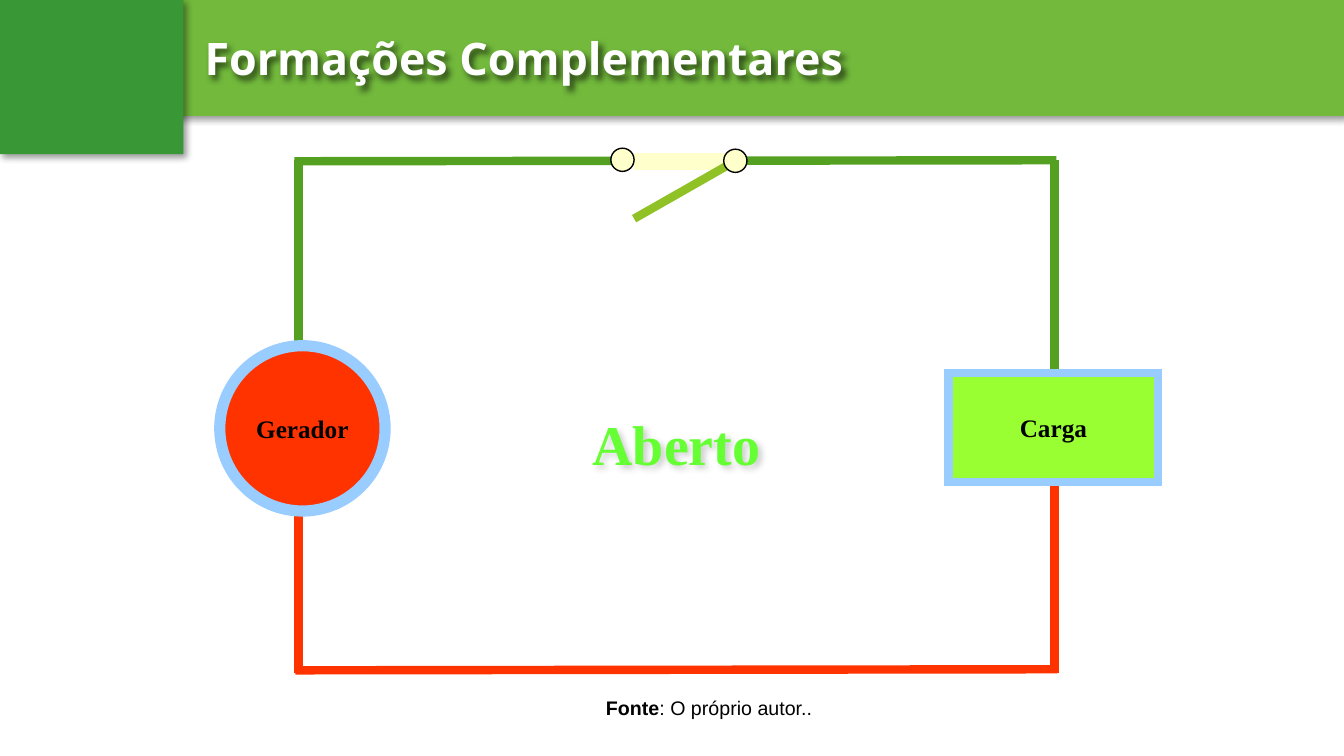
from dataclasses import dataclass
from typing import Optional

import pptx
import pptx.dml.color
import pptx.enum.shapes
import pptx.enum.text
import pptx.oxml
import pptx.oxml.ns
import pptx.util
from lxml import etree

SHAPE = pptx.enum.shapes.MSO_SHAPE
ANCHOR = pptx.enum.text.MSO_ANCHOR
ALIGN = pptx.enum.text.PP_ALIGN
FIT = pptx.enum.text.MSO_AUTO_SIZE
qn = pptx.oxml.ns.qn


@dataclass(frozen=True)
class Theme:
    banner: str = "72B93C"
    corner: str = "399736"
    live_wire: str = "54A021"
    return_wire: str = "FF3300"
    switch_arm: str = "90C226"
    contact: str = "FFFFCC"
    load: str = "99FF33"
    halo: str = "99CCFF"
    state: str = "66FF33"
    light: str = "FFFFFF"
    dark: str = "000000"
    title_size: int = 32
    state_size: int = 40
    part_size: int = 18
    source_size: int = 14
    title_font: str = "Open Sans"
    circuit_font: str = "Times New Roman"
    source_font: str = "Arial"


THEME = Theme()


@dataclass(frozen=True)
class Area:
    left: float
    top: float
    width: float
    height: float


@dataclass(frozen=True)
class Label:
    pieces: tuple[tuple[str, bool], ...]
    size: int
    font: str
    color: str
    align: Optional[ALIGN] = ALIGN.CENTER
    anchor: ANCHOR = ANCHOR.TOP
    fit: FIT = FIT.NONE
    spacing: Optional[float] = None
    vertical_inset: float = 0.05


@dataclass(frozen=True)
class Block:
    area: Area
    kind: Optional[SHAPE] = None
    fill: str = ""
    outline: str = ""
    weight: float = 0
    shadow: int = 0
    label: Optional[Label] = None


@dataclass(frozen=True)
class Wire:
    start: tuple[float, float]
    end: tuple[float, float]
    color: str


def part_label(name: str) -> Label:
    return Label(((name, True),), THEME.part_size, THEME.circuit_font, THEME.dark,
                 anchor=ANCHOR.MIDDLE)


def contact(left: float, top: float) -> Block:
    return Block(Area(left, top, 1.73, 3.07), SHAPE.OVAL, THEME.contact, THEME.dark, 1)


LEFT, RIGHT = 22.2, 78.45
TOP, BOTTOM = 21.2, 89.07
GAP_START, GAP_END = 47.18, 54.08

HEADER = (
    Block(Area(10.58, 0, 89.42, 15.33), SHAPE.RECTANGLE, THEME.banner, shadow=40),
    Block(Area(14.48, 3.47, 81.15, 8.53), shadow=60,
          label=Label((("Formações Complementares", True),), THEME.title_size,
                      THEME.title_font, THEME.light, align=ALIGN.LEFT)),
    Block(Area(0, 0, 13.65, 20.4), SHAPE.RECTANGLE, THEME.corner, shadow=40),
)
CIRCUIT = (
    Wire((LEFT, 53.47), (LEFT, TOP), THEME.live_wire),
    Wire((21.9, 21.33), (78.6, TOP), THEME.live_wire),
    Wire((RIGHT, 56.8), (RIGHT, TOP), THEME.live_wire),
    Wire((RIGHT, BOTTOM), (RIGHT, 53.47), THEME.return_wire),
    Wire((21.98, 88.67), (78.68, 88.53), THEME.return_wire),
    Wire((LEFT, BOTTOM), (LEFT, 56.8), THEME.return_wire),
    Block(Area(16.35, 45.73, 12.3, 21.87), SHAPE.OVAL, THEME.return_wire,
          THEME.halo, 8, label=part_label("Gerador")),
    Block(Area(70.58, 49.33, 15.6, 14.4), SHAPE.RECTANGLE, THEME.load,
          THEME.halo, 6, label=part_label("Carga")),
    Block(Area(40.58, 48.13, 19.5, 6.93), shadow=20,
          label=Label((("Aberto", True),), THEME.state_size, THEME.circuit_font,
                      THEME.state, fit=FIT.SHAPE_TO_FIT_TEXT, spacing=1.6)),
    Wire((GAP_START, 20.8), (GAP_END, 20.8), THEME.contact),
    Wire((GAP_START, 21.87), (GAP_END, 21.87), THEME.contact),
    Wire((GAP_START, 28.93), (54.68, 21.33), THEME.switch_arm),
    contact(45.45, 19.6),
    contact(53.85, 19.73),
)
SOURCE = (
    Block(Area(39.3, 90.67, 26.93, 5.87),
          label=Label((("Fonte", True), (": O próprio autor..", False)),
                      THEME.source_size, THEME.source_font, THEME.dark,
                      fit=FIT.SHAPE_TO_FIT_TEXT, vertical_inset=0.1)),
)

deck = pptx.Presentation()
deck.slide_width = pptx.util.Inches(13.33)
deck.slide_height = pptx.util.Inches(7.5)


def across(share: float) -> int:
    return round(deck.slide_width * share / 100)


def down(share: float) -> int:
    return round(deck.slide_height * share / 100)


def rgb(color: str) -> pptx.dml.color.RGBColor:
    return pptx.dml.color.RGBColor.from_string(color)


def apply(target: object, values: dict[str, object]) -> None:
    for name, value in values.items():
        setattr(target, name, value)


def cast_shadow(shape, opacity: int) -> None:
    effects = shape._element.spPr.find(qn("a:effectLst"))
    outer = etree.SubElement(effects, qn("a:outerShdw"), blurRad=str(pptx.util.Pt(5)),
                             dist=str(pptx.util.Pt(3)), dir="2700000", algn="tl",
                             rotWithShape="0")
    tint = etree.SubElement(outer, qn("a:srgbClr"), val=THEME.dark)
    etree.SubElement(tint, qn("a:alpha"), val=str(opacity * 1000))


def write_label(shape, label: Label) -> None:
    inset = pptx.util.Inches(label.vertical_inset)
    side = pptx.util.Inches(0.1)
    apply(shape.text_frame, {
        "word_wrap": True, "auto_size": label.fit, "vertical_anchor": label.anchor,
        "margin_left": side, "margin_right": side,
        "margin_top": inset, "margin_bottom": inset,
    })
    paragraph = shape.text_frame.paragraphs[0]
    apply(paragraph, {"alignment": label.align, "line_spacing": label.spacing})
    for text, bold in label.pieces:
        run = paragraph.add_run()
        run.text = text
        apply(run.font, {"size": pptx.util.Pt(label.size), "name": label.font, "bold": bold})
        run.font.color.rgb = rgb(label.color)


def draw_block(slide, block: Block) -> None:
    area = block.area
    box = (across(area.left), down(area.top), across(area.width), down(area.height))
    if block.kind is None:
        shape = slide.shapes.add_textbox(*box)
    else:
        shape = slide.shapes.add_shape(block.kind, *box)
        shape.fill.solid()
        shape.fill.fore_color.rgb = rgb(block.fill)
        if block.outline:
            shape.line.color.rgb = rgb(block.outline)
            shape.line.width = pptx.util.Pt(block.weight)
            etree.SubElement(shape._element.spPr.find(qn("a:ln")), qn("a:miter"), lim="800000")
        else:
            shape.line.fill.background()
    shape.shadow.inherit = False
    if block.shadow:
        cast_shadow(shape, block.shadow)
    if block.label:
        write_label(shape, block.label)


def draw_wire(slide, wire: Wire) -> None:
    (x1, y1), (x2, y2) = wire.start, wire.end
    line = slide.shapes.add_connector(pptx.enum.shapes.MSO_CONNECTOR.STRAIGHT,
                                      across(x1), down(y1), across(x2), down(y2))
    line.line.color.rgb = rgb(wire.color)
    line.line.width = pptx.util.Pt(6)
    etree.SubElement(line._element.spPr, qn("a:effectLst"))


def main() -> None:
    slide = deck.slides.add_slide(deck.slide_layouts[6])
    for part in HEADER + CIRCUIT + SOURCE:
        if isinstance(part, Wire):
            draw_wire(slide, part)
        else:
            draw_block(slide, part)
    deck.save("out.pptx")


if __name__ == "__main__":
    main()
